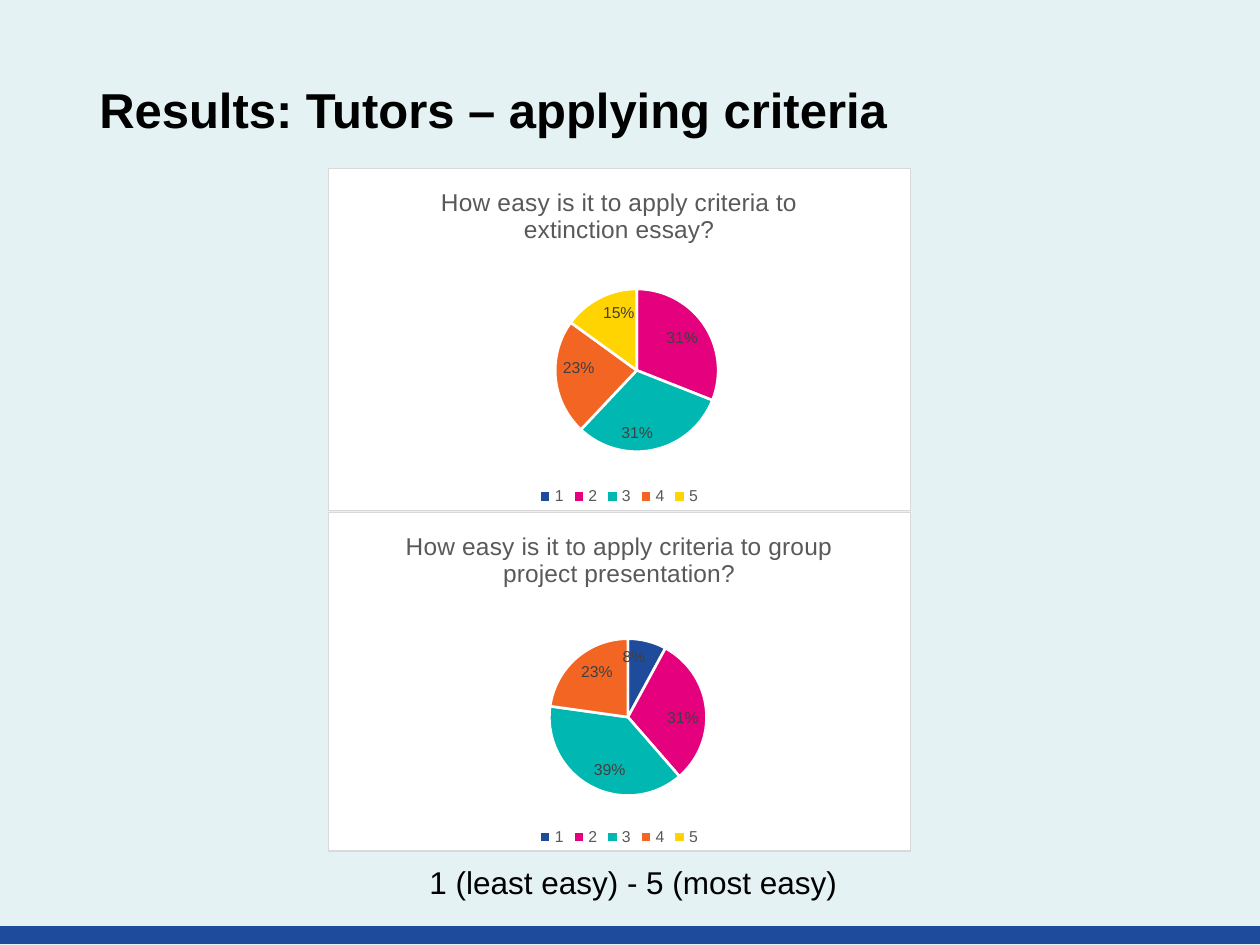
from lxml import etree
from pptx import Presentation
from pptx.chart.data import CategoryChartData
from pptx.dml.color import RGBColor
from pptx.enum import chart as ch, shapes, text
from pptx.oxml import parse_xml
from pptx.oxml.ns import nsdecls, qn
from pptx.util import Inches, Pt

BACKGROUND = RGBColor(0xE4, 0xF2, 0xF4)
BLUE = RGBColor(0x1E, 0x4B, 0x9B)
BLACK = RGBColor(0, 0, 0)
WHITE = RGBColor(0xFF, 0xFF, 0xFF)
GREY = RGBColor(0x59, 0x59, 0x59)
DARK_GREY = RGBColor(0x40, 0x40, 0x40)
BORDER = RGBColor(0xD9, 0xD9, 0xD9)
RATING_COLORS = [
    BLUE,
    RGBColor(0xE5, 0x00, 0x7D),
    RGBColor(0x00, 0xB7, 0xB2),
    RGBColor(0xF2, 0x65, 0x22),
    RGBColor(0xFF, 0xD4, 0x00),
]
RATINGS = ["1", "2", "3", "4", "5"]


def set_font(font, size, color, bold=False):
    font.name = "Arial"
    font.size = Pt(size)
    font.bold = bold
    font.color.rgb = color


def add_text(slide, box, wording, size, bold=False, top_margin=0.05):
    frame = slide.shapes.add_textbox(*map(Inches, box)).text_frame
    frame.word_wrap = True
    frame.vertical_anchor = text.MSO_ANCHOR.TOP
    frame.margin_top = Inches(top_margin)
    paragraph = frame.paragraphs[0]
    paragraph.text = wording
    set_font(paragraph.font, size, BLACK, bold)


def add_footer_bar(slide):
    bar = slide.shapes.add_shape(
        shapes.MSO_SHAPE.RECTANGLE, Inches(0), Inches(7.36), Inches(10), Inches(0.13))
    bar.shadow.inherit = False
    bar.fill.solid()
    bar.fill.fore_color.rgb = BLUE
    bar.line.color.rgb = BLUE
    bar.line.width = Pt(1)


def frame_chart(chart):
    chart_part = chart._chartSpace.find(qn("c:chart"))
    chart_part.addnext(parse_xml(
        f'<c:spPr {nsdecls("c", "a")}>'
        f'<a:solidFill><a:srgbClr val="{WHITE}"/></a:solidFill>'
        f'<a:ln w="{Pt(0.75)}"><a:solidFill><a:srgbClr val="{BORDER}"/></a:solidFill></a:ln>'
        '</c:spPr>'))


def place_pie(chart, pie_area):
    plot_area = chart._chartSpace.find(qn("c:chart")).find(qn("c:plotArea"))
    for automatic in plot_area.findall(qn("c:layout")):
        plot_area.remove(automatic)
    layout = etree.Element(qn("c:layout"))
    manual = etree.SubElement(layout, qn("c:manualLayout"))
    settings = [("layoutTarget", "inner"), ("xMode", "edge"), ("yMode", "edge")]
    for tag, value in settings + list(zip("xywh", pie_area)):
        etree.SubElement(manual, qn(f"c:{tag}")).set("val", str(value))
    plot_area.insert(0, layout)


def add_rating_pie(slide, box, question, shares, pie_area):
    data = CategoryChartData(number_format="0%")
    data.categories = RATINGS
    data.add_series("Series 1", shares)
    chart = slide.shapes.add_chart(
        ch.XL_CHART_TYPE.PIE, *map(Inches, box), data).chart
    set_font(chart.font, 10, BLACK)
    frame_chart(chart)
    place_pie(chart, pie_area)

    chart.has_title = True
    chart.chart_title.include_in_layout = False
    heading = chart.chart_title.text_frame.paragraphs[0]
    heading.text = question
    set_font(heading.font, 14, GREY)

    chart.has_legend = True
    chart.legend.position = ch.XL_LEGEND_POSITION.BOTTOM
    chart.legend.include_in_layout = False
    set_font(chart.legend.font, 9, GREY)

    plot = chart.plots[0]
    plot.vary_by_categories = True
    series = plot.series[0]
    for index, color in enumerate(RATING_COLORS):
        slice_format = series.points[index].format
        slice_format.fill.solid()
        slice_format.fill.fore_color.rgb = color
        slice_format.line.color.rgb = WHITE
        slice_format.line.width = Pt(1.5)
    labels = series.data_labels
    labels.show_value = True
    labels.number_format = "0%"
    labels.number_format_is_linked = False
    labels.position = ch.XL_LABEL_POSITION.INSIDE_END
    set_font(labels.font, 9, DARK_GREY)


def main():
    deck = Presentation()
    deck.slide_width, deck.slide_height = Inches(10), Inches(7.5)
    slide = deck.slides.add_slide(deck.slide_layouts[6])
    slide.background.fill.solid()
    slide.background.fill.fore_color.rgb = BACKGROUND

    add_footer_bar(slide)
    add_text(slide, (0.69, 0.4, 8.62, 1.45), "Results: Tutors – applying criteria",
             28, bold=True, top_margin=0.23)
    add_text(slide, (3.31, 6.8, 3.64, 0.55), "1 (least easy) - 5 (most easy)", 18)
    add_rating_pie(slide, (2.6, 1.33, 4.63, 2.73),
                   "How easy is it to apply criteria to extinction essay?",
                   [None, 0.31, 0.31, 0.23, 0.15], (0.39, 0.35, 0.28, 0.48))
    add_rating_pie(slide, (2.6, 4.06, 4.63, 2.7),
                   "How easy is it to apply criteria to group project presentation?",
                   [0.08, 0.31, 0.39, 0.23, None], (0.38, 0.37, 0.27, 0.47))
    deck.save("out.pptx")


if __name__ == "__main__":
    main()
